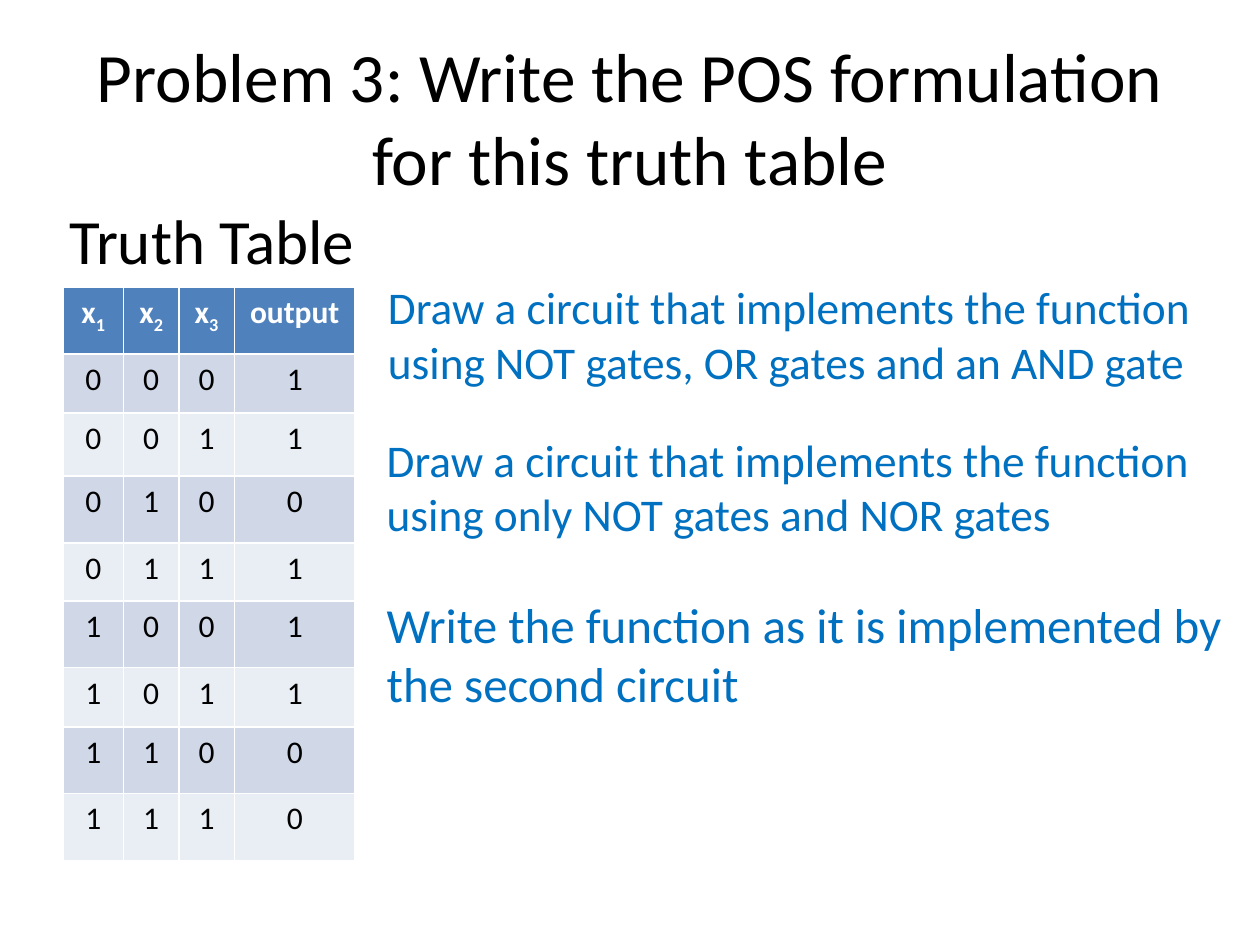
from pptx import Presentation
from pptx.dml.color import RGBColor
from pptx.enum import text as t
from pptx.util import Inches, Pt

TITLE = "Problem 3: Write the POS formulation for this truth table"
LABEL = "Truth Table"
HEADS = [("x", "1"), ("x", "2"), ("x", "3"), ("output", "")]
OUTPUTS = "11011100"
COLS = [0.48, 0.44, 0.44, 0.96]
ROWS = [0.53, 0.47, 0.5, 0.53, 0.46, 0.53, 0.47, 0.53, 0.53]
HEAD, BANDS = "4F81BD", ["D0D8E8", "E9EDF4"]
TASKS = [
    ("Draw a circuit that implements the function using NOT gates, "
     "OR gates and an AND gate", 2.98, 2.17, 25.9),
    ("Draw a circuit that implements the function using only NOT gates "
     "and NOR gates", 2.97, 3.38, 25.9),
    ("Write the function as it is implemented by the second circuit",
     2.97, 4.67, 28),
]


def color(code):
    return RGBColor.from_string(code)


def write(par, words, size, code="000000", **extra):
    run = par.add_run()
    run.text = words
    style = {"name": "Calibri", "size": Pt(size), **extra}
    for key, value in style.items():
        setattr(run.font, key, value)
    run.font.color.rgb = color(code)
    return run


def add_text(slide, words, box, size, code="000000"):
    frame = slide.shapes.add_textbox(*map(Inches, box)).text_frame
    frame.word_wrap = True
    write(frame.paragraphs[0], words, size, code)
    return frame


def add_title(slide):
    title = slide.shapes.title
    box = {"left": 0.5, "top": 0.3, "width": 9, "height": 1.25}
    for key, value in box.items():
        setattr(title, key, Inches(value))
    frame = title.text_frame
    frame.auto_size = t.MSO_AUTO_SIZE.NONE
    frame.vertical_anchor = t.MSO_ANCHOR.MIDDLE
    par = frame.paragraphs[0]
    par.alignment = t.PP_ALIGN.CENTER
    write(par, TITLE, 39.6)


def fill_cell(cell, code):
    """Fill the cell and return its centred paragraph."""
    cell.fill.solid()
    cell.fill.fore_color.rgb = color(code)
    par = cell.text_frame.paragraphs[0]
    par.alignment = t.PP_ALIGN.CENTER
    return par


def add_truth(slide):
    box = map(Inches, (0.5, 2.28, sum(COLS), sum(ROWS)))
    table = slide.shapes.add_table(len(ROWS), len(COLS), *box).table
    for col, width in zip(table.columns, COLS):
        col.width = Inches(width)
    for row, height in zip(table.rows, ROWS):
        row.height = Inches(height)
    for c, (name, sub) in enumerate(HEADS):
        par = fill_cell(table.cell(0, c), HEAD)
        write(par, name, 18, "FFFFFF", bold=True)
        if sub:
            low = write(par, sub, 18, "FFFFFF", bold=True)
            low.font._element.set("baseline", "-25000")
    for r, out in enumerate(OUTPUTS):
        for c, bit in enumerate(f"{r:03b}{out}"):
            par = fill_cell(table.cell(r + 1, c), BANDS[r % 2])
            write(par, bit, 18)


def main():
    deck = Presentation()
    deck.slide_width, deck.slide_height = Inches(10), Inches(7.5)
    slide = deck.slides.add_slide(deck.slide_layouts.get_by_name("Title Only"))
    add_title(slide)
    label = add_text(slide, LABEL, (0.34, 1.55, 2.63, 0.71), 36)
    label.margin_left = Inches(0.21)
    add_truth(slide)
    for words, left, top, size in TASKS:
        add_text(slide, words, (left, top, 6.85, 1.1), size, "0070C0")
    deck.save("out.pptx")


if __name__ == "__main__":
    main()
